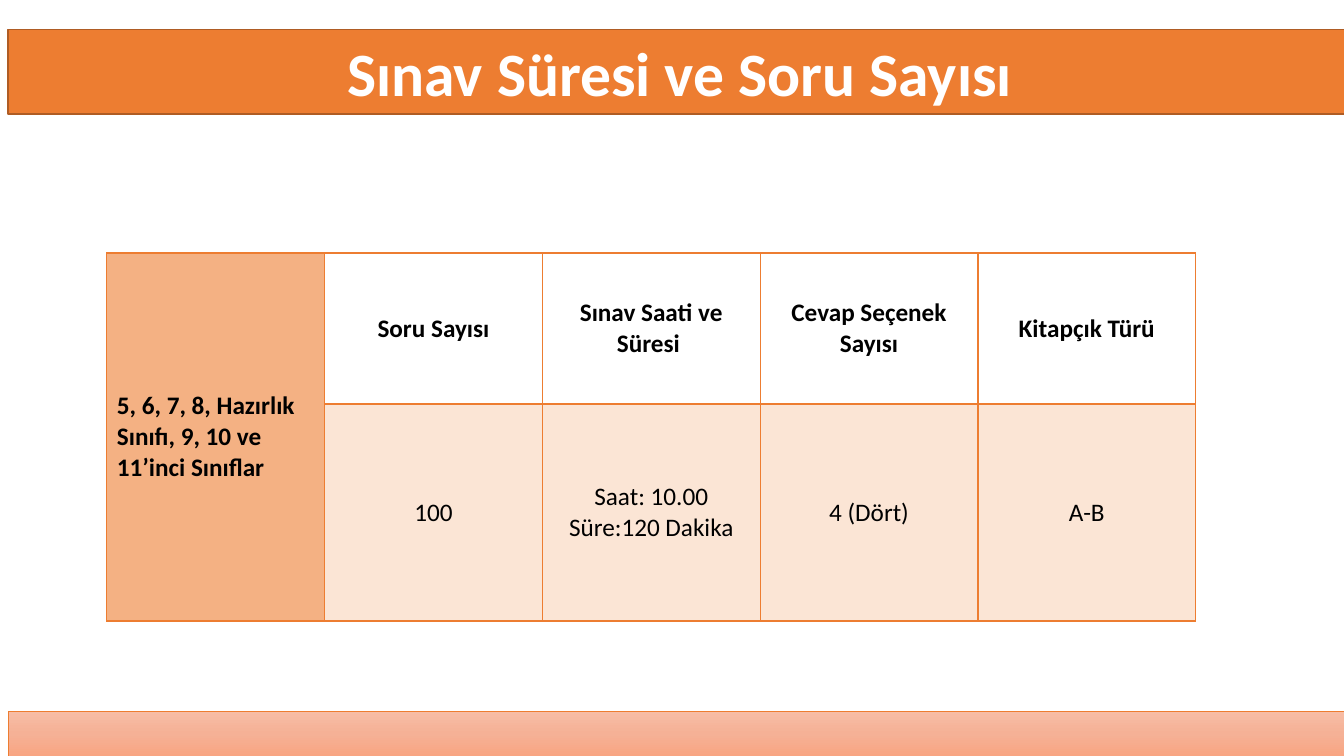
from lxml import etree
from pptx import Presentation, util as u
from pptx.dml.color import RGBColor
from pptx.enum import shapes, text as t
from pptx.oxml import parse_xml
from pptx.oxml.ns import nsdecls, qn

ORANGE = "ED7D31"
COLS, COL_W = 5, 216
ROWS = (150, 215)
GROUP = "5, 6, 7, 8, Hazırlık Sınıfı, 9, 10 ve 11’inci Sınıflar"
HEADS = ("Soru Sayısı", "Sınav Saati ve Süresi ", "Cevap Seçenek Sayısı", "Kitapçık Türü")
VALUES = ("100", "Saat: 10.00 Süre:120 Dakika", "4 (Dört)", "A-B")


def px(n):
    """One px is a hundredth of an inch."""
    return u.Emu(n * 9144)


def rgb(code):
    return RGBColor.from_string(code)


def write(frame, words, size=18, color="000000", bold=False, align=t.PP_ALIGN.CENTER):
    para = frame.paragraphs[0]
    para.alignment = align
    run = para.add_run()
    run.text = words
    font = run.font
    font.name, font.size, font.bold = "Calibri", u.Pt(size), bold
    font.color.rgb = rgb(color)


def bar(slide, x, y, w, h, line, width):
    box = slide.shapes.add_shape(shapes.MSO_SHAPE.RECTANGLE, px(x), px(y), px(w), px(h))
    box.shadow.inherit = False
    box.line.color.rgb = rgb(line)
    box.line.width = u.Pt(width)
    return box


def blend(box, stops):
    """Fill a shape with a top-to-bottom gradient of (percent, colour) stops."""
    marks = "".join(
        f'<a:gs pos="{pos * 1000}"><a:srgbClr val="{code}"/></a:gs>' for pos, code in stops)
    grad = parse_xml(f'<a:gradFill {nsdecls("a")} rotWithShape="1"><a:gsLst>{marks}</a:gsLst>'
                     '<a:lin ang="5400000" scaled="0"/></a:gradFill>')
    box._element.spPr.find(qn("a:prstGeom")).addnext(grad)


def border(cell, **widths):
    """Draw orange cell edges; lines stand ahead of the fill."""
    props = cell._tc.get_or_add_tcPr()
    for spot, side in enumerate("LRTB"):
        edge = parse_xml(
            f'<a:ln{side} {nsdecls("a")} w="{u.Pt(widths.get(side, 1))}"><a:solidFill>'
            f'<a:srgbClr val="{ORANGE}"/></a:solidFill></a:ln{side}>')
        props.insert(spot, edge)


def paint(cell, color=None, alpha=None):
    if color is None:
        cell.fill.background()
        return
    cell.fill.solid()
    cell.fill.fore_color.rgb = rgb(color)
    if alpha:
        tint = cell._tc.tcPr.find(".//" + qn("a:srgbClr"))
        etree.SubElement(tint, qn("a:alpha"), val=str(alpha * 1000))


def grid(slide, x, y):
    table = slide.shapes.add_table(
        len(ROWS), COLS, px(x), px(y), px(COLS * COL_W), px(sum(ROWS))).table
    table.first_row = table.horz_banding = False
    for col in table.columns:
        col.width = px(COL_W)
    for row, high in zip(table.rows, ROWS):
        row.height = px(high)

    # Grade group, spanning both rows
    group = table.cell(0, 0)
    group.merge(table.cell(1, 0))
    write(group.text_frame, GROUP, bold=True, align=t.PP_ALIGN.LEFT)
    for r in range(len(ROWS)):
        paint(table.cell(r, 0), "F4B183")
        border(table.cell(r, 0), B=2)
    group.vertical_anchor = t.MSO_ANCHOR.MIDDLE

    # Headings and their values
    for c, (head, value) in enumerate(zip(HEADS, VALUES), 1):
        top, low = table.cell(0, c), table.cell(1, c)
        write(top.text_frame, head, bold=True)
        write(low.text_frame, value)
        paint(top)
        paint(low, ORANGE, 20)
        border(top, B=2)
        border(low, T=2, B=2)
        top.vertical_anchor = low.vertical_anchor = t.MSO_ANCHOR.MIDDLE


def main():
    deck = Presentation()
    deck.slide_width, deck.slide_height = px(1333), px(750)
    slide = deck.slides.add_slide(deck.slide_layouts[6])

    # Title band
    title = bar(slide, 8, 29, 1333, 84, "AF5C24", 1)
    title.fill.solid()
    title.fill.fore_color.rgb = rgb(ORANGE)
    frame = title.text_frame
    frame.word_wrap = True
    frame.auto_size = t.MSO_AUTO_SIZE.SHAPE_TO_FIT_TEXT
    frame.vertical_anchor = t.MSO_ANCHOR.MIDDLE
    write(frame, "Sınav Süresi ve Soru Sayısı", size=44, color="FFFFFF", bold=True)

    # Footer band
    foot = bar(slide, 8, 706, 1326, 44, ORANGE, 0.5)
    blend(foot, ((0, "F7BDA5"), (50, "F5B196"), (100, "F8A582")))

    # Exam table
    grid(slide, 106, 251)
    deck.save("out.pptx")


if __name__ == "__main__":
    main()
